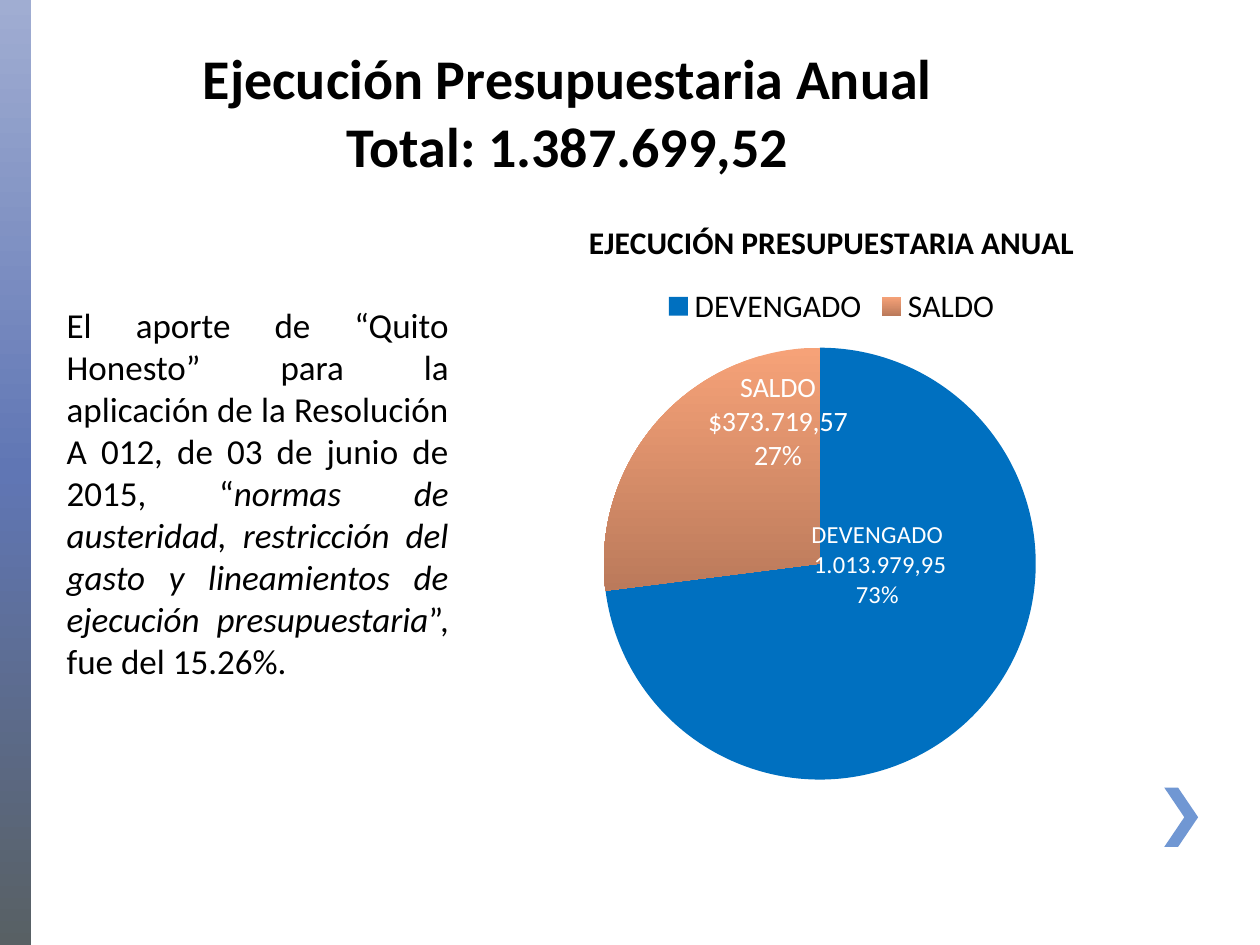
from copy import deepcopy

from lxml.etree import SubElement
from pptx import Presentation
from pptx.chart.data import CategoryChartData
from pptx.dml.color import RGBColor
from pptx.enum.chart import XL_CHART_TYPE, XL_LABEL_POSITION, XL_LEGEND_POSITION
from pptx.enum.shapes import MSO_SHAPE
from pptx.enum.text import MSO_ANCHOR, MSO_AUTO_SIZE, PP_ALIGN
from pptx.oxml.ns import qn
from pptx.util import Pt

FONT = "Calibri"
BLACK = RGBColor(0x00, 0x00, 0x00)
WHITE = RGBColor(0xFF, 0xFF, 0xFF)
BLUE = RGBColor(0x00, 0x70, 0xC0)
CHEVRON = RGBColor(0x70, 0x97, 0xD3)
BAR_STOPS = [RGBColor(0xA0, 0xAD, 0xD2), RGBColor(0x60, 0x76, 0xB4), RGBColor(0x58, 0x60, 0x64)]
SALDO_STOPS = [RGBColor(0xF6, 0xA2, 0x78), RGBColor(0xBB, 0x7A, 0x5B)]


def set_font(font, size, color=BLACK, bold=False):
    font.name, font.size, font.bold = FONT, Pt(size), bold
    font.color.rgb = color


def fill_down(fill, colors):
    """Vertical gradient with evenly spaced stops."""
    fill.gradient()
    fill.gradient_angle = 270
    first = fill.gradient_stops[0]._gs
    for _ in colors[2:]:
        first.addnext(deepcopy(first))
    for i, (stop, color) in enumerate(zip(fill.gradient_stops, colors)):
        stop.color.rgb = color
        stop.position = i / (len(colors) - 1)


prs = Presentation()
prs.slide_width, prs.slide_height = Pt(720), Pt(540)
s = prs.slides.add_slide(prs.slide_layouts[5])

# Left bar
bar = s.shapes.add_shape(MSO_SHAPE.RECTANGLE, 0, 0, Pt(18), Pt(540))
bar.shadow.inherit = False
bar.line.fill.background()
fill_down(bar.fill, BAR_STOPS)

# Chevron
fb = s.shapes.build_freeform(Pt(673.2), Pt(450))
fb.add_line_segments([(Pt(x), Pt(y)) for x, y in
                      [(665.3, 450), (676.8, 467), (665.3, 484), (673.2, 484), (684.7, 467)]])
chevron = fb.convert_to_shape()
chevron.shadow.inherit = False
chevron.line.fill.background()
chevron.fill.solid()
chevron.fill.fore_color.rgb = CHEVRON

# Title
title = s.shapes.title
title.left, title.top, title.width, title.height = Pt(50.4), Pt(21), Pt(548), Pt(85)
tf = title.text_frame
tf.text = "Ejecución Presupuestaria Anual\nTotal: 1.387.699,52"
tf.auto_size = MSO_AUTO_SIZE.NONE
tf.vertical_anchor = MSO_ANCHOR.MIDDLE
for p in tf.paragraphs:
    p.alignment = PP_ALIGN.CENTER
    set_font(p.font, 32, bold=True)

# Explanation
tf = s.shapes.add_textbox(Pt(31), Pt(170), Pt(232.5), Pt(225)).text_frame
tf.word_wrap = True
p = tf.paragraphs[0]
p.alignment = PP_ALIGN.JUSTIFY
set_font(p.font, 20)
for text, italic in [
    ("El aporte de “Quito Honesto” para la aplicación de la Resolución A 012, "
     "de 03 de junio de 2015, “", False),
    ("normas de austeridad, restricción del gasto y lineamientos de "
     "ejecución presupuestaria", True),
    ("”, fue del 15.26%.", False),
]:
    r = p.add_run()
    r.text, r.font.italic = text, italic

# Pie chart
data = CategoryChartData()
data.categories = ["DEVENGADO", "SALDO"]
data.add_series("Series 1", (73, 27))
chart = s.shapes.add_chart(XL_CHART_TYPE.PIE, Pt(252), Pt(111.6), Pt(446.4), Pt(363), data).chart
set_font(chart.font, 18)
chart.has_title = True
chart.chart_title.text_frame.text = "EJECUCIÓN PRESUPUESTARIA ANUAL"
set_font(chart.chart_title.text_frame.paragraphs[0].font, 18, bold=True)
chart.has_legend = True
chart.legend.position = XL_LEGEND_POSITION.TOP
chart.legend.include_in_layout = False

# Plot area position
plot_area = chart.plots[0]._element.getparent()
layout = plot_area.find(qn("c:layout"))
if layout is None:
    layout = plot_area.makeelement(qn("c:layout"))
    plot_area.insert(0, layout)
manual = SubElement(layout, qn("c:manualLayout"))
for tag, val in [("layoutTarget", "inner"), ("xMode", "edge"), ("yMode", "edge"),
                 ("x", "0.05"), ("y", "0.24"), ("w", "0.87"), ("h", "0.68")]:
    SubElement(manual, qn(f"c:{tag}")).set("val", val)

# Slices and their labels, each shifted from the middle of its slice
points = chart.plots[0].series[0].points
points[0].format.fill.solid()
points[0].format.fill.fore_color.rgb = BLUE
fill_down(points[1].format.fill, SALDO_STOPS)
for i, (text, size, dx, dy) in enumerate([
    ("DEVENGADO\n 1.013.979,95\n73%", 14, -0.03, -0.11),
    ("SALDO\n$373.719,57\n27%", 16, 0.05, -0.11),
]):
    label = points[i].data_label
    label.text_frame.text = text
    for p in label.text_frame.paragraphs:
        set_font(p.font, size, WHITE, bold=True)
    label.position = XL_LABEL_POSITION.CENTER
    idx = label._dLbl.find(qn("c:idx"))
    layout = idx.makeelement(qn("c:layout"))
    idx.addnext(layout)
    manual = SubElement(layout, qn("c:manualLayout"))
    for tag, val in [("x", dx), ("y", dy)]:
        SubElement(manual, qn(f"c:{tag}")).set("val", str(val))

prs.save("out.pptx")
